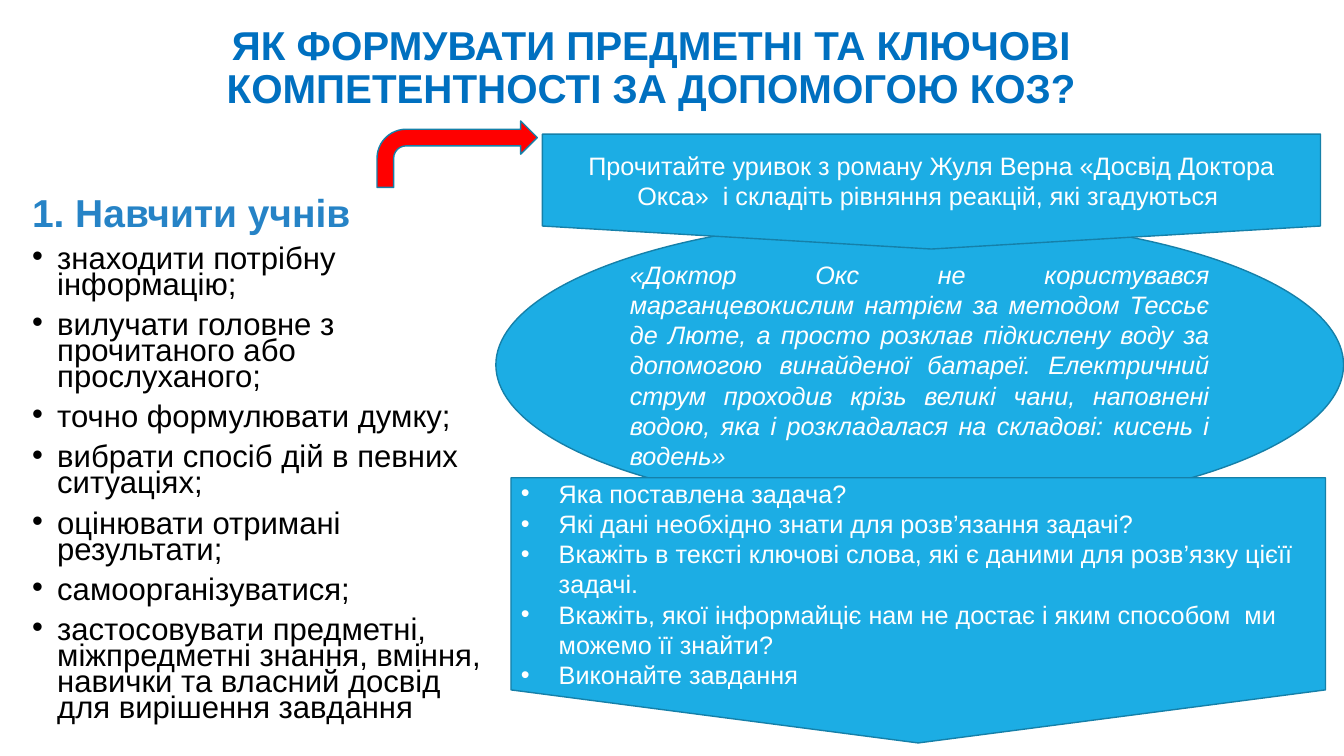
from lxml.etree import SubElement
from pptx import Presentation
from pptx.dml.color import RGBColor
from pptx.enum.shapes import MSO_SHAPE
from pptx.enum.text import MSO_ANCHOR, MSO_AUTO_SIZE, PP_ALIGN
from pptx.oxml.ns import qn
from pptx.util import Pt

TITLE_BLUE = RGBColor(0x00, 0x70, 0xC0)
HEADING_BLUE = RGBColor(0x26, 0x83, 0xC6)
SKY = RGBColor(0x1C, 0xAD, 0xE4)
OUTLINE = RGBColor(0x15, 0x80, 0xA9)
RED = RGBColor(0xFF, 0x00, 0x00)
WHITE = RGBColor(0xFF, 0xFF, 0xFF)
BLACK = RGBColor(0x00, 0x00, 0x00)

SKILLS = [
    "знаходити потрібну інформацію;",
    "вилучати головне з прочитаного або прослуханого;",
    "точно формулювати думку;",
    "вибрати спосіб дій в певних ситуаціях;",
    "оцінювати отримані результати;",
    "самоорганізуватися;",
    "застосовувати предметні, міжпредметні знання, вміння, навички "
    "та власний досвід для вирішення завдання",
]
TASK = ("Прочитайте уривок з роману Жуля Верна «Досвід Доктора Окса»  "
        "і складіть рівняння реакцій, які згадуються ")
EXCERPT = (
    "«Доктор Окс не користувався марганцевокислим натрієм за методом Тессьє "
    "де Люте, а просто розклав підкислену воду за допомогою винайденої батареї. "
    "Електричний струм проходив крізь великі чани, наповнені водою, яка "
    "і розкладалася на складові: кисень і водень»"
)
QUESTIONS = [
    "Яка поставлена задача?",
    "Які дані необхідно знати для розв’язання задачі?",
    "Вкажіть в тексті ключові слова, які є даними для розв’язку цієїї задачі.",
    "Вкажіть, якої інформайціє нам не достає і яким способом  ми можемо її знайти?",
    "Виконайте завдання",
]


def write(frame, lines, size=18, color=WHITE, bold=False, italic=False,
          align=PP_ALIGN.LEFT, spacing=1.0, before=0, hang=0):
    """Append paragraphs; a hang above zero makes them bulleted."""
    for line in lines:
        first = len(frame.paragraphs) == 1 and not frame.text
        paragraph = frame.paragraphs[0] if first else frame.add_paragraph()
        paragraph.alignment = align
        paragraph.line_spacing = spacing
        paragraph.space_before = Pt(before)
        if hang:
            props = paragraph._p.get_or_add_pPr()
            props.set("marL", str(Pt(hang)))
            props.set("indent", str(-Pt(hang)))
            SubElement(props, qn("a:buFont"), typeface="Arial")
            SubElement(props, qn("a:buChar"), char="•")
        run = paragraph.add_run()
        run.text = line
        font = run.font
        font.name, font.size = "Arial", Pt(size)
        font.bold, font.italic = bold, italic
        font.color.rgb = color


class LessonSlide:
    def __init__(self, deck):
        self.slide = deck.slides.add_slide(deck.slide_layouts[5])

    def title(self, text, left, top, width, height):
        heading = self.slide.shapes.title
        heading.left, heading.top = Pt(left), Pt(top)
        heading.width, heading.height = Pt(width), Pt(height)
        frame = heading.text_frame
        frame.auto_size = MSO_AUTO_SIZE.NONE
        frame.vertical_anchor = MSO_ANCHOR.MIDDLE
        write(frame, [text], size=28.8, color=TITLE_BLUE, bold=True,
              align=PP_ALIGN.CENTER, spacing=0.9)

    def text_box(self, left, top, width, height):
        box = self.slide.shapes.add_textbox(Pt(left), Pt(top), Pt(width), Pt(height))
        box.fill.solid()
        box.fill.fore_color.rgb = WHITE
        box.text_frame.word_wrap = True
        return box.text_frame

    def shape(self, kind, left, top, width, height, fill=SKY):
        block = self.slide.shapes.add_shape(
            kind, Pt(left), Pt(top), Pt(width), Pt(height))
        block.shadow.inherit = False
        block.fill.solid()
        block.fill.fore_color.rgb = fill
        block.line.color.rgb = OUTLINE
        block.line.width = Pt(1)
        block.text_frame.word_wrap = True
        block.text_frame.vertical_anchor = MSO_ANCHOR.MIDDLE
        return block.text_frame


def main():
    deck = Presentation()
    deck.slide_width, deck.slide_height = Pt(960), Pt(540)
    lesson = LessonSlide(deck)

    lesson.title("ЯК ФОРМУВАТИ ПРЕДМЕТНІ ТА КЛЮЧОВІ КОМПЕТЕНТНОСТІ ЗА ДОПОМОГОЮ КОЗ?",
                 37.4, 11.5, 856, 75.6)

    skills = lesson.text_box(15.8, 140.4, 342, 382.3)
    write(skills, ["1. Навчити учнів"], size=27.8, color=HEADING_BLUE,
          bold=True, spacing=0.7, before=10)
    write(skills, SKILLS, size=22.2, color=BLACK, spacing=0.7, before=10, hang=18)

    lesson.shape(MSO_SHAPE.BENT_ARROW, 269.3, 86.4, 114.5, 47.5, fill=RED)
    excerpt = lesson.shape(MSO_SHAPE.OVAL, 354.2, 155.5, 605.5, 210.2)
    write(excerpt, [EXCERPT], italic=True, align=PP_ALIGN.JUSTIFY)

    banner = MSO_SHAPE.FLOWCHART_OFFPAGE_CONNECTOR
    task = lesson.shape(banner, 387.4, 95.8, 555.8, 82.1)
    write(task, [TASK], align=PP_ALIGN.CENTER)
    questions = lesson.shape(banner, 365, 341.3, 581.8, 189.4)
    write(questions, QUESTIONS, hang=27)

    deck.save("out.pptx")


if __name__ == "__main__":
    main()
